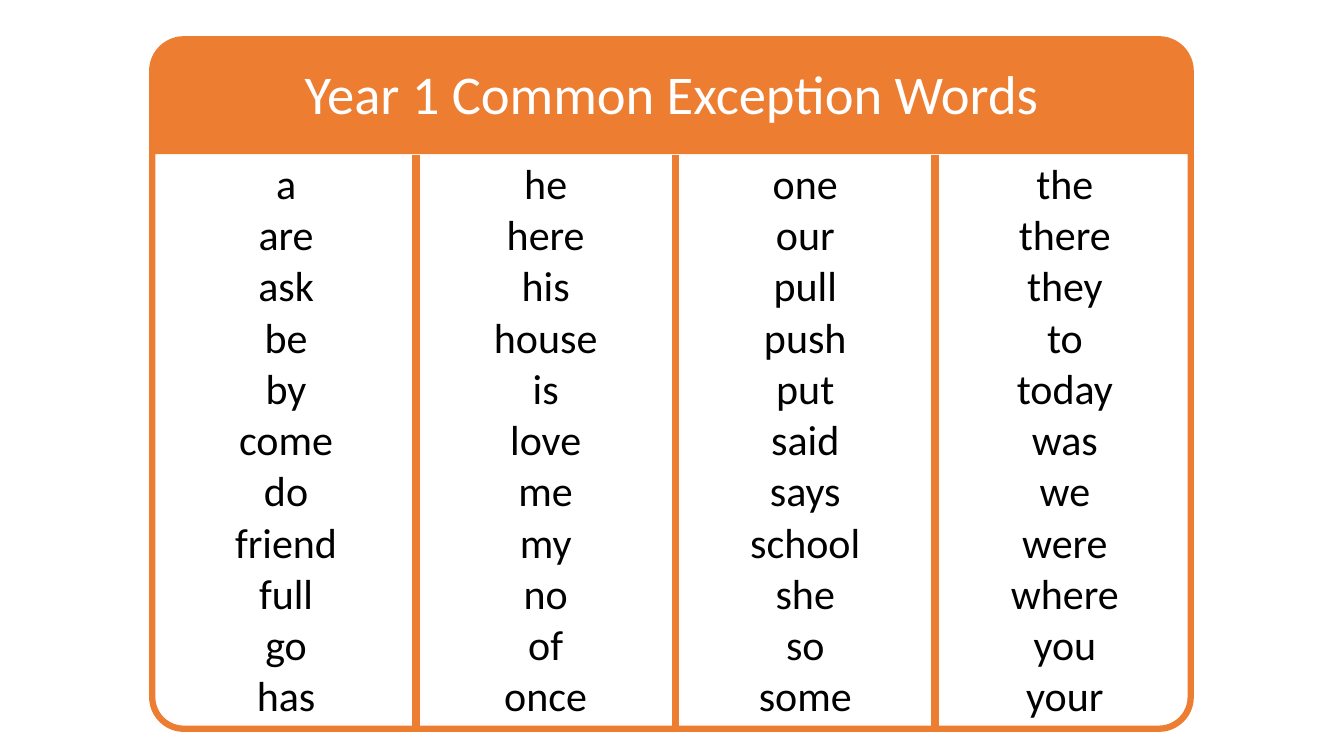
from lxml import etree
from pptx import Presentation
from pptx.dml.color import RGBColor
from pptx.enum.shapes import MSO_SHAPE
from pptx.enum.text import MSO_ANCHOR, MSO_AUTO_SIZE, PP_ALIGN
from pptx.oxml.ns import qn
from pptx.util import Inches, Pt

TITLE = "Year 1 Common Exception Words"
WORD_COLUMNS = [
    ["a", "are", "ask", "be", "by", "come", "do", "friend", "full", "go", "has"],
    ["he", "here", "his", "house", "is", "love", "me", "my", "no", "of", "once"],
    ["one", "our", "pull", "push", "put", "said", "says", "school", "she", "so", "some"],
    ["the", "there", "they", "to", "today", "was", "we", "were", "where", "you", "your"],
]

ORANGE = RGBColor(0xED, 0x7D, 0x31)
WHITE = RGBColor(0xFF, 0xFF, 0xFF)
BLACK = RGBColor(0x00, 0x00, 0x00)
FONT = "Calibri"
CENTER = PP_ALIGN.CENTER
MIDDLE = MSO_ANCHOR.MIDDLE
NO_AUTOFIT = MSO_AUTO_SIZE.NONE
RECT = MSO_SHAPE.RECTANGLE
ROUNDED = MSO_SHAPE.ROUNDED_RECTANGLE

LEFT, TOP, WIDTH, HEIGHT = 1.51, 0.39, 10.3, 6.84
HEADER_HEIGHT = 1.05
TABLE_LEFT, TABLE_TOP, TABLE_HEIGHT = 1.55, 1.54, 5.69
BAND_TOP, BAND_HEIGHT = 0.86, 0.67
CELL_FORMAT = {
    "margin_left": Inches(0.08), "margin_right": Inches(0.08),
    "margin_top": Inches(0.04), "margin_bottom": Inches(0.04),
}


def set_format(target, values):
    for name, value in values.items():
        setattr(target, name, value)


def write(p, text, size, color):
    p.alignment = CENTER
    r = p.add_run()
    r.text = text
    set_format(r.font, {"name": FONT, "size": Pt(size)})
    r.font.color.rgb = color


def set_borders(cell, borders):
    tc_pr = cell._tc.get_or_add_tcPr()
    for i, (side, (color, width)) in enumerate(borders.items()):
        ln = etree.Element(qn(f"a:ln{side}"), w=str(Pt(width)))
        fill = etree.SubElement(ln, qn("a:solidFill"))
        etree.SubElement(fill, qn("a:srgbClr"), val=str(color))
        tc_pr.insert(i, ln)


def add_panel(slide, kind, box, fill=None, line=None, radius=None):
    sp = slide.shapes.add_shape(kind, *map(Inches, box))
    sp.shadow.inherit = False
    if radius is not None:
        sp.adjustments[0] = radius
    if fill is None:
        sp.fill.background()
    else:
        sp.fill.solid()
        sp.fill.fore_color.rgb = fill
    if line is None:
        sp.line.fill.background()
    else:
        sp.line.color.rgb = ORANGE
        sp.line.width = Pt(line)


def add_word_table(slide):
    count = len(WORD_COLUMNS)
    box = (TABLE_LEFT, TABLE_TOP, WIDTH, TABLE_HEIGHT)
    table = slide.shapes.add_table(1, count, *map(Inches, box)).table
    set_format(table, {"first_row": False, "horz_banding": False})
    divider, edge = (ORANGE, 6), (WHITE, 1)
    for i, words in enumerate(WORD_COLUMNS):
        table.columns[i].width = Inches(WIDTH / count)
        cell = table.cell(0, i)
        set_format(cell, CELL_FORMAT)
        cell.fill.background()
        set_borders(cell, {
            "L": divider if i else edge,
            "R": divider if i < count - 1 else edge,
            "T": edge,
            "B": (WHITE, 3),
        })
        tf = cell.text_frame
        for j, word in enumerate(words):
            p = tf.add_paragraph() if j else tf.paragraphs[0]
            write(p, word, 30, BLACK)


def add_title(slide, box):
    title = slide.shapes.title
    left, top, width, height = map(Inches, box)
    set_format(title, {"left": left, "top": top, "width": width, "height": height})
    tf = title.text_frame
    set_format(tf, {"word_wrap": True, "auto_size": NO_AUTOFIT, "vertical_anchor": MIDDLE})
    write(tf.paragraphs[0], TITLE, 39, WHITE)
    title.element.getparent().append(title.element)


def main():
    prs = Presentation()
    prs.slide_width, prs.slide_height = Inches(13.33), Inches(7.5)
    slide = prs.slides.add_slide(prs.slide_layouts[5])
    header = (LEFT, TOP, WIDTH, HEADER_HEIGHT)
    add_word_table(slide)
    add_panel(slide, RECT, (LEFT, BAND_TOP, WIDTH, BAND_HEIGHT), fill=ORANGE)
    add_panel(slide, ROUNDED, (LEFT, TOP, WIDTH, HEIGHT), line=4.5, radius=0.046)
    add_panel(slide, ROUNDED, header, fill=ORANGE, line=1, radius=0.268)
    add_title(slide, header)
    prs.save("out.pptx")


if __name__ == "__main__":
    main()
